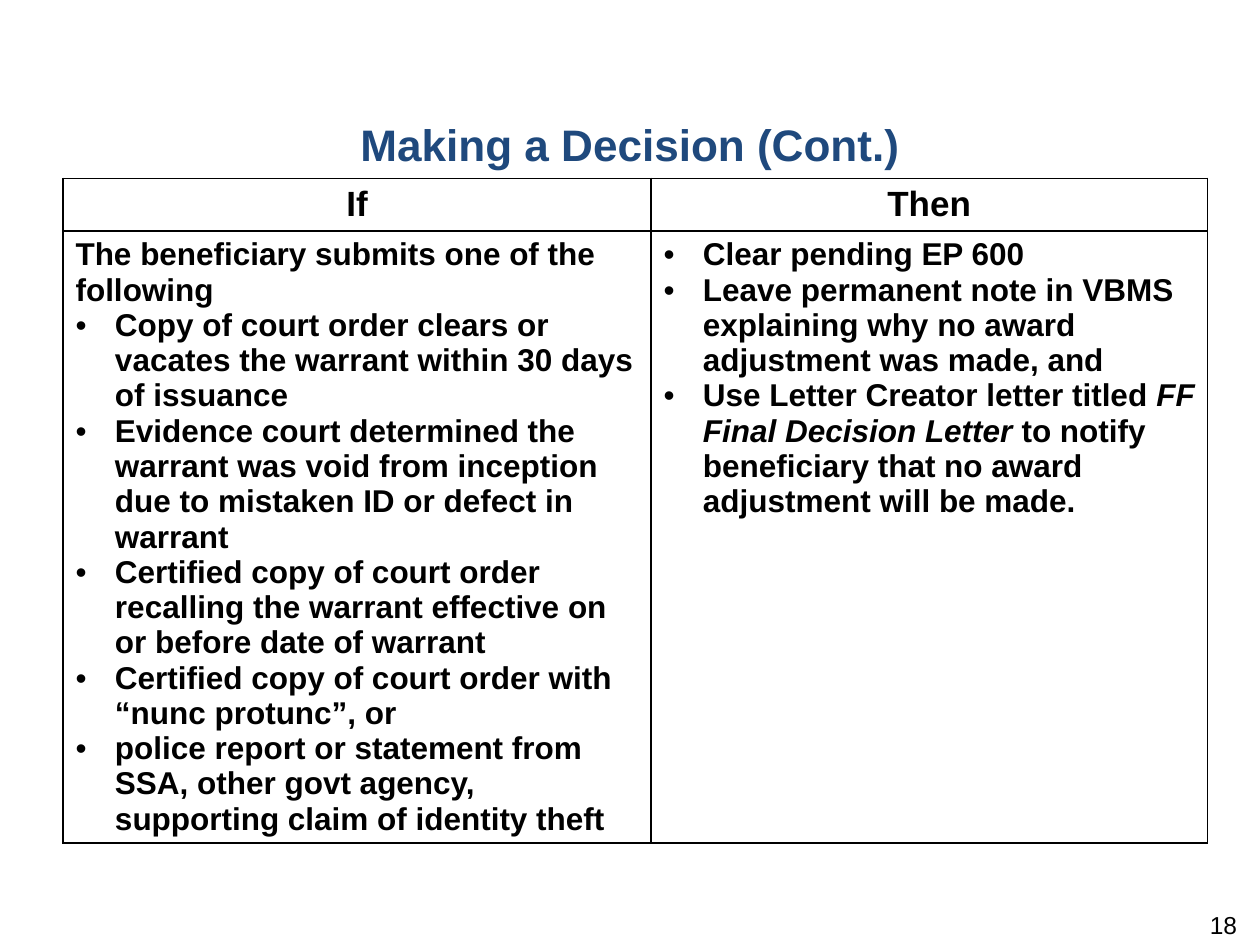
import pptx
import pptx.util
import pptx.dml.color
import pptx.enum.text
import pptx.oxml
import pptx.oxml.ns

Pt = pptx.util.Pt
ALIGN = pptx.enum.text.PP_ALIGN
ANCHOR = pptx.enum.text.MSO_ANCHOR

TITLE = {"name": "Arial", "size": Pt(25.2), "bold": True, "color": "1F497D"}
HEADER = {"name": "Arial", "size": Pt(20), "bold": True, "color": "000000"}
BODY = {**HEADER, "size": Pt(18)}
NUMBER = {**HEADER, "size": Pt(14), "bold": False}

CONDITIONS = [
    "Copy of court order clears or vacates the warrant within 30 days of issuance",
    "Evidence court determined the warrant was void from inception due to mistaken ID or defect in warrant",
    "Certified copy of court order recalling the warrant effective on or before date of warrant",
    "Certified copy of court order with “nunc protunc”, or",
    "police report or statement from SSA, other govt agency, supporting claim of identity theft",
]
ACTIONS = [
    "Clear pending EP 600",
    "Leave permanent note in VBMS explaining why no award adjustment was made, and",
    [
        ("Use Letter Creator letter titled ", False),
        ("FF Final Decision Letter ", True),
        ("to notify beneficiary that no award adjustment will be made.", False),
    ],
]


def color(value):
    return pptx.dml.color.RGBColor.from_string(value)


def format_font(font, values):
    for name, value in values.items():
        if name == "color":
            font.color.rgb = color(value)
        else:
            setattr(font, name, value)


def format_frame(frame, values):
    for name, value in values.items():
        setattr(frame, name, value)


def write_paragraph(paragraph, content, values, alignment=None, bullet=False):
    if bullet:
        properties = paragraph._p.get_or_add_pPr()
        properties.set("marL", str(Pt(22.5)))
        properties.set("indent", str(-Pt(22.5)))
        for tag, name, value in (("buFont", "typeface", "Arial"), ("buChar", "char", "•")):
            element = pptx.oxml.parse_xml(f'<a:{tag} {pptx.oxml.ns.nsdecls("a")} {name}="{value}"/>')
            properties.append(element)
    paragraph.alignment = alignment
    pieces = [(content, False)] if isinstance(content, str) else content
    for text, italic in pieces:
        run = paragraph.add_run()
        run.text = text
        format_font(run.font, {**values, "italic": italic})


def write_list(frame, items, intro=None):
    lines = [(item, True) for item in items]
    if intro:
        lines.insert(0, (intro, False))
    for index, (content, bullet) in enumerate(lines):
        paragraph = frame.add_paragraph() if index else frame.paragraphs[0]
        write_paragraph(paragraph, content, BODY, ALIGN.LEFT, bullet)


def format_cell(cell):
    cell.fill.solid()
    cell.fill.fore_color.rgb = color("FFFFFF")
    properties = cell._tc.get_or_add_tcPr()
    for position, side in enumerate("LRTB"):
        border = pptx.oxml.parse_xml(
            f'<a:ln{side} {pptx.oxml.ns.nsdecls("a")} w="{Pt(1)}"><a:solidFill>'
            f'<a:srgbClr val="000000"/></a:solidFill></a:ln{side}>'
        )
        properties.insert(position, border)


def add_title(slide, left, top, width, height):
    title = slide.shapes.title
    title.left, title.top, title.width, title.height = left, top, width, height
    format_frame(title.text_frame, {"vertical_anchor": ANCHOR.MIDDLE, "word_wrap": True})
    write_paragraph(title.text_frame.paragraphs[0], "Making a Decision (Cont.)", TITLE, ALIGN.CENTER)


def add_decision_table(slide, left, top, width, height):
    table = slide.shapes.add_table(2, 2, left, top, width, height).table
    table.columns[0].width = Pt(336)
    table.columns[1].width = width - Pt(336)
    table.rows[0].height = Pt(30)
    table.rows[1].height = height - Pt(30)
    for cell in table.iter_cells():
        format_cell(cell)
    for column, heading in enumerate(("If", "Then")):
        paragraph = table.cell(0, column).text_frame.paragraphs[0]
        write_paragraph(paragraph, heading, HEADER, ALIGN.CENTER)
    write_list(table.cell(1, 0).text_frame, CONDITIONS, "The beneficiary submits one of the following")
    write_list(table.cell(1, 1).text_frame, ACTIONS)


def add_page_number(slide, left, top, width, height):
    frame = slide.shapes.add_textbox(left, top, width, height).text_frame
    format_frame(frame, {"word_wrap": True, "margin_top": Pt(0), "vertical_anchor": ANCHOR.TOP})
    write_paragraph(frame.paragraphs[0], "18", NUMBER, ALIGN.RIGHT)


def main():
    presentation = pptx.Presentation()
    presentation.slide_width = Pt(720)
    presentation.slide_height = Pt(540)
    slide = presentation.slides.add_slide(presentation.slide_layouts[5])
    add_title(slide, Pt(0), Pt(62.5), Pt(720), Pt(39.5))
    add_decision_table(slide, Pt(36), Pt(102), Pt(654), Pt(379))
    add_page_number(slide, Pt(546), Pt(520), Pt(168), Pt(29))
    presentation.save("out.pptx")


if __name__ == "__main__":
    main()
